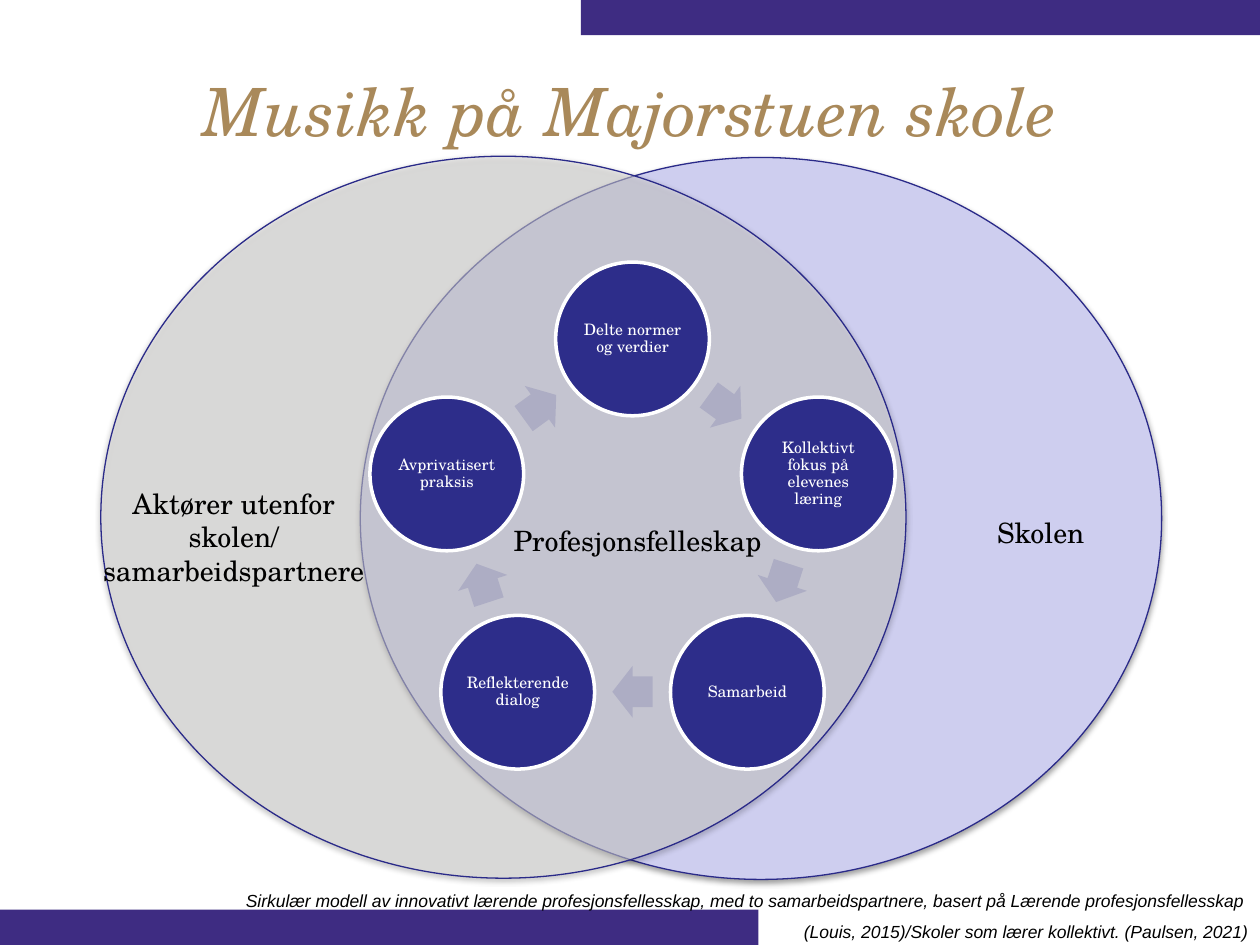
from math import cos, radians, sin

from lxml.etree import SubElement
from pptx import Presentation
from pptx.dml.color import RGBColor
from pptx.enum.shapes import MSO_SHAPE as SHAPE
from pptx.enum.text import MSO_ANCHOR as ANCHOR, MSO_AUTO_SIZE as AUTO, PP_ALIGN as ALIGN
from pptx.oxml.ns import qn
from pptx.util import Inches, Pt

TITLE = "Musikk på Majorstuen skole"
STEPS = ["Delte normer og verdier", "Kollektivt fokus på elevenes læring", "Samarbeid",
         "Reflekterende dialog", "Avprivatisert praksis"]
CAPTION = ("Sirkulær modell av innovativt lærende profesjonsfellesskap, med to samarbeidspartnere, "
           "basert på Lærende profesjonsfellesskap \v"
           "(Louis, 2015)/Skoler som lærer kollektivt. (Paulsen, 2021)")
LABELS = [  # lines, box
    (["Aktører utenfor", "skolen/", "samarbeidspartnere"], (0.68, 3.81, 2.35, 0.91)),
    (["Skolen"], (7.41, 4.04, 1.7, 0.37)),
    (["Profesjonsfelleskap"], (3.74, 4.11, 2.64, 0.37)),
]
BARS = [(0, 7.22, 6.02, 0.28), (4.61, 0, 5.39, 0.28)]
VENN = [("school", (2.86, 1.25, 6.36, 5.73), 100), ("partners", (0.8, 1.24, 6.39, 5.73), 50)]

SERIF = "TeX Gyre Schola"
THEME = {
    "colors": {"bar": "3E2C82", "school": "CECEEF", "partners": "E4E3E1", "edge": "2A2A89",
               "node": "2D2D8A", "arrow": "ADADC4", "white": "FFFFFF"},
    "title": {"name": SERIF, "size": 38, "italic": True, "color": "A9895A"},
    "label": {"name": SERIF, "size": 16, "color": "000000"},
    "node": {"name": SERIF, "size": 9, "color": "FFFFFF"},
    "caption": {"name": "Arial", "size": 10, "italic": True, "color": "000000"},
}
CENTER, NODE_RADIUS, ARROW_RADIUS = (5.02, 4.24), 1.55, 1.25
NODE_SIZE, ARROW_SIZE = (1.22, 1.22), (0.32, 0.41)


def color(name):
    return RGBColor.from_string(THEME["colors"][name])


def add_shape(s, kind, box, fill, line=None, width=0.75):
    sp = s.shapes.add_shape(kind, *map(Inches, box))
    sp.shadow.inherit = False
    sp.fill.solid()
    sp.fill.fore_color.rgb = color(fill)
    if line:
        sp.line.color.rgb = color(line)
        sp.line.width = Pt(width)
    else:
        sp.line.fill.background()
    return sp


def set_alpha(clr, percent):
    SubElement(clr, qn("a:alpha"), val=str(percent * 1000))


def add_soft_shadow(sp):
    effects = sp._element.spPr.find(qn("a:effectLst"))
    shadow = SubElement(effects, qn("a:outerShdw"), blurRad=str(Pt(3.1)), dist=str(Pt(1.6)),
                        dir="5400000", rotWithShape="0")
    set_alpha(SubElement(shadow, qn("a:srgbClr"), val="000000"), 38)


def write(tf, lines, style, align=ALIGN.CENTER, **spacing):
    tf.word_wrap = True
    tf.text = "\n".join(lines)
    for p in tf.paragraphs:
        p.alignment = align
        for name, value in spacing.items():
            setattr(p, name, value)
        for r in p.runs:
            for name, value in THEME[style].items():
                if name == "color":
                    r.font.color.rgb = RGBColor.from_string(value)
                else:
                    setattr(r.font, name, Pt(value) if name == "size" else value)


def add_text(s, box, lines, style, **options):
    tf = s.shapes.add_textbox(*map(Inches, box)).text_frame
    write(tf, lines, style, **options)


def ring_box(angle, radius, size):
    """Box of the given size centred on the ring, clockwise from the top."""
    x = CENTER[0] + radius * sin(radians(angle))
    y = CENTER[1] - radius * cos(radians(angle))
    return x - size[0] / 2, y - size[1] / 2, *size


def add_title(s):
    title = s.shapes.title
    title.left, title.top, title.width, title.height = map(Inches, (0, 0.55, 10, 0.73))
    tf = title.text_frame
    write(tf, [TITLE], "title", line_spacing=0.9)
    tf.auto_size = AUTO.NONE
    tf.vertical_anchor = ANCHOR.MIDDLE


def add_venn(s):
    for fill, box, opacity in VENN:
        sp = add_shape(s, SHAPE.OVAL, box, fill, "edge")
        add_soft_shadow(sp)
        if opacity < 100:
            set_alpha(sp._element.spPr.find(qn("a:solidFill"))[0], opacity)


def add_cycle(s):
    step = 360 / len(STEPS)
    for i, text in enumerate(STEPS):
        node = add_shape(s, SHAPE.OVAL, ring_box(i * step, NODE_RADIUS, NODE_SIZE),
                         "node", "white", 2)
        tf = node.text_frame
        for side in ("left", "top", "right", "bottom"):
            setattr(tf, f"margin_{side}", Inches(0.01))
        tf.vertical_anchor = ANCHOR.MIDDLE
        write(tf, [text], "node", line_spacing=0.9)

        angle = (i + 0.5) * step
        arrow = add_shape(s, SHAPE.RIGHT_ARROW, ring_box(angle, ARROW_RADIUS, ARROW_SIZE), "arrow")
        arrow.adjustments[0], arrow.adjustments[1] = 0.6, 0.5
        arrow.rotation = angle


def main():
    prs = Presentation()
    prs.slide_width, prs.slide_height = Inches(10), Inches(7.5)
    s = prs.slides.add_slide(prs.slide_layouts[5])
    for box in BARS:
        add_shape(s, SHAPE.RECTANGLE, box, "bar")
    add_title(s)
    add_venn(s)
    add_cycle(s)
    for lines, box in LABELS:
        add_text(s, box, lines, "label")
    add_text(s, (1.74, 6.93, 8.26, 0.57), [CAPTION], "caption",
             align=ALIGN.RIGHT, line_spacing=1.5)
    prs.save("out.pptx")


if __name__ == "__main__":
    main()
